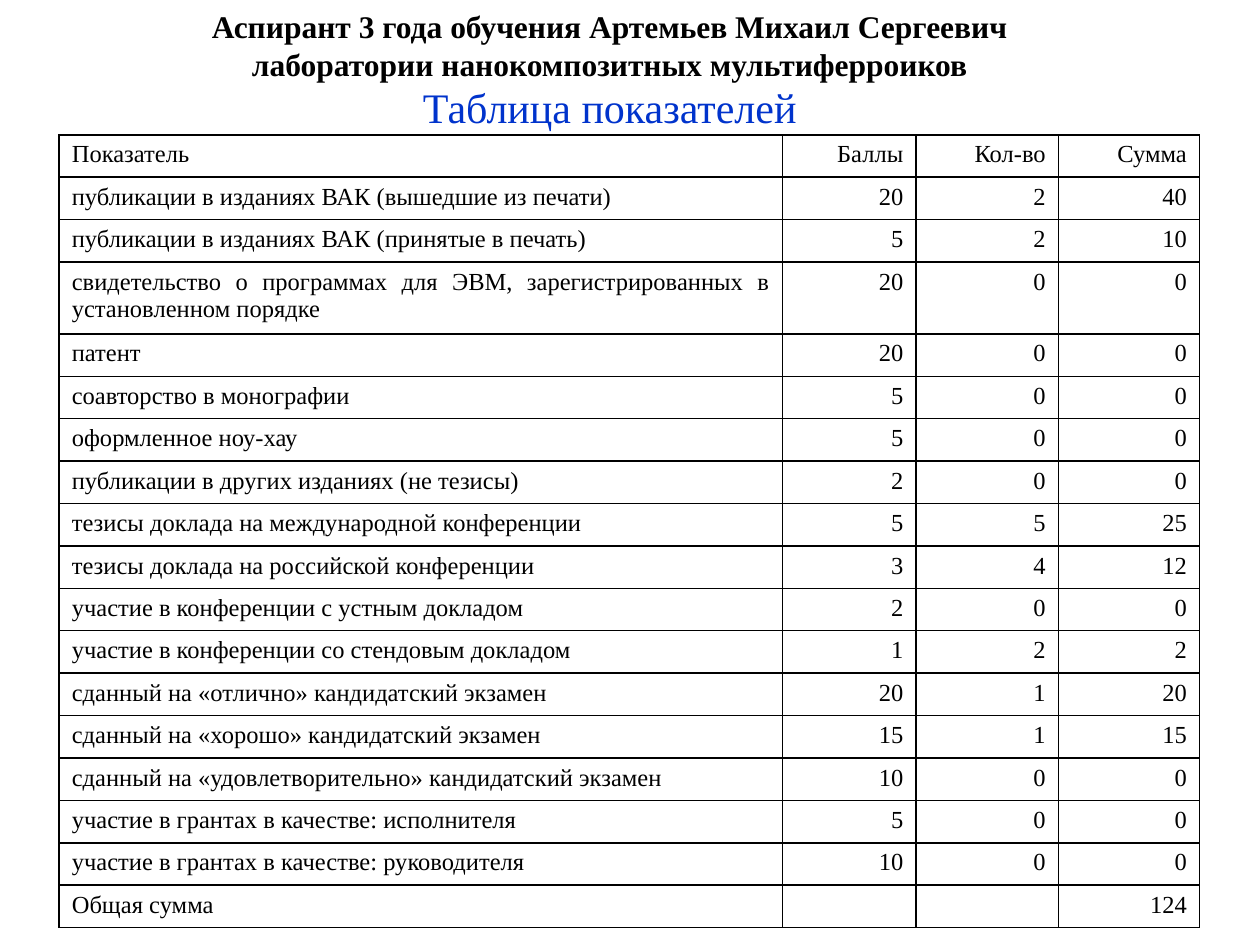
from dataclasses import dataclass

from lxml import etree
from pptx import Presentation
from pptx.dml.color import RGBColor
from pptx.enum.text import MSO_ANCHOR, PP_ALIGN
from pptx.oxml.ns import qn
from pptx.util import Inches, Pt

LEFT, MID, RIGHT = PP_ALIGN.JUSTIFY, PP_ALIGN.CENTER, PP_ALIGN.RIGHT
TOP, CENTRE = MSO_ANCHOR.TOP, MSO_ANCHOR.MIDDLE
WIDE, HIGH = Inches(10), Inches(7.5)


@dataclass(frozen=True)
class Theme:
    font: str = "Times New Roman"
    ink: str = "000000"
    blue: str = "0033CC"
    head: int = 18
    sub: int = 24
    body: int = 14
    rule: int = 1


THEME = Theme()

# Places are percent of the slide's width and height.
HEAD_BOX = (5.9, 0, 85, 9.47)
SUB_BOX = (13.4, 8, 70, 6.27)
GRID_AT = (4.7, 14.27)
COLS = (57.4, 10.6, 11.3, 11.2)
ROW, TALL = 4.49, 7.6
TALL_ROW = 3

HEADS = ("Показатель", "Баллы", "Кол-во", "Сумма")
SCORES = (
    ("публикации в изданиях ВАК (вышедшие из печати)", 20, 2),
    ("публикации в изданиях ВАК (принятые в печать)", 5, 2),
    ("свидетельство о программах для ЭВМ, зарегистрированных в "
     "установленном порядке", 20, 0),
    ("патент", 20, 0),
    ("соавторство в монографии", 5, 0),
    ("оформленное ноу-хау", 5, 0),
    ("публикации в других изданиях (не тезисы)", 2, 0),
    ("тезисы доклада на международной конференции", 5, 5),
    ("тезисы доклада на российской конференции", 3, 4),
    ("участие в конференции с устным докладом", 2, 0),
    ("участие в конференции со стендовым докладом", 1, 2),
    ("сданный на «отлично» кандидатский экзамен", 20, 1),
    ("сданный на «хорошо» кандидатский экзамен", 15, 1),
    ("сданный на «удовлетворительно» кандидатский экзамен", 10, 0),
    ("участие в грантах в качестве: исполнителя", 5, 0),
    ("участие в грантах в качестве: руководителя", 10, 0),
)


def across(share):
    return round(WIDE * share / 100)


def down(share):
    return round(HIGH * share / 100)


def write(frame, text, align, size, color=THEME.ink, bold=False):
    frame.text = text
    line = frame.paragraphs[0]
    line.alignment = align
    form = {"name": THEME.font, "size": Pt(size), "bold": bold}
    for run in line.runs:
        for key, value in form.items():
            setattr(run.font, key, value)
        run.font.color.rgb = RGBColor.from_string(color)
    if not line.runs:
        # An empty line would otherwise take the default size and stretch its row.
        etree.SubElement(line._p, qn("a:endParaRPr"), sz=str(size * 100))


def add_text(slide, box, text, anchor, **form):
    left, top, width, height = box
    frame = slide.shapes.add_textbox(
        across(left), down(top), across(width), down(height)).text_frame
    frame.word_wrap = True
    frame.vertical_anchor = anchor
    write(frame, text, MID, **form)


def add_edges(cell):
    props = cell._tc.get_or_add_tcPr()
    for side in ("lnL", "lnR", "lnT", "lnB"):
        edge = etree.SubElement(props, qn(f"a:{side}"), w=str(Pt(THEME.rule)))
        fill = etree.SubElement(edge, qn("a:solidFill"))
        etree.SubElement(fill, qn("a:srgbClr"), val=THEME.ink)


def list_rows():
    """Work out each sum and the total."""
    rows = [(name, mark, count, mark * count) for name, mark, count in SCORES]
    total = sum(row[-1] for row in rows)
    return [HEADS, *rows, ("Общая сумма", "", "", total)]


def add_grid(slide, rows):
    highs = [TALL if i == TALL_ROW else ROW for i in range(len(rows))]
    left, top = GRID_AT
    table = slide.shapes.add_table(
        len(rows), len(COLS), across(left), down(top),
        across(sum(COLS)), down(sum(highs))).table
    table.first_row = table.horz_banding = False
    for col, share in zip(table.columns, COLS):
        col.width = across(share)
    for r, (row, share) in enumerate(zip(rows, highs)):
        table.rows[r].height = down(share)
        for c, value in enumerate(row):
            cell = table.cell(r, c)
            add_edges(cell)
            cell.fill.background()
            write(cell.text_frame, str(value), RIGHT if c else LEFT, THEME.body)


def main():
    deck = Presentation()
    deck.slide_width, deck.slide_height = WIDE, HIGH
    slide = deck.slides.add_slide(deck.slide_layouts[6])
    add_text(slide, HEAD_BOX,
             "Аспирант 3 года обучения Артемьев Михаил Сергеевич\v"
             "лаборатории нанокомпозитных мультиферроиков",
             CENTRE, size=THEME.head, bold=True)
    add_text(slide, SUB_BOX, "Таблица показателей", TOP,
             size=THEME.sub, color=THEME.blue)
    add_grid(slide, list_rows())
    deck.save("out.pptx")


if __name__ == "__main__":
    main()
